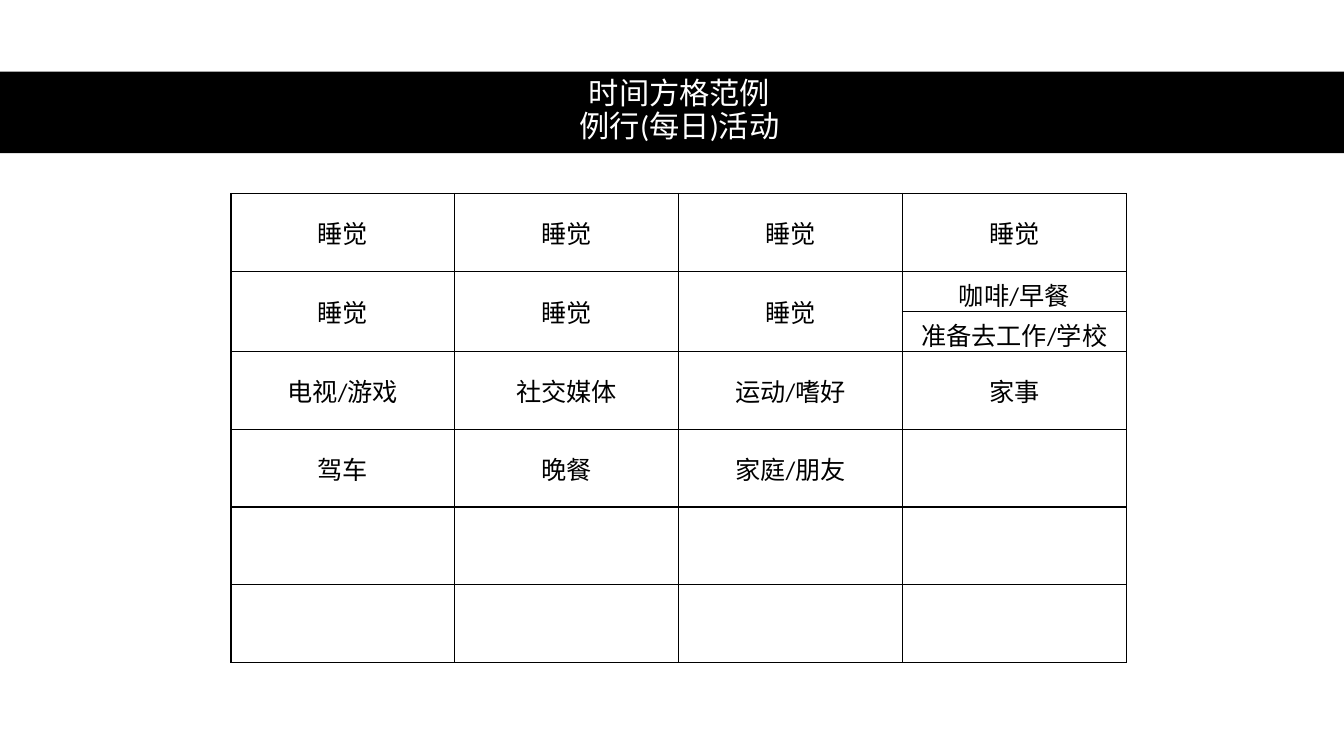
import pptx
import pptx.dml.color
import pptx.enum.shapes
import pptx.enum.text
import pptx.oxml
import pptx.oxml.ns
import pptx.util

SLIDE_WIDTH = pptx.util.Inches(13.33)
SLIDE_HEIGHT = pptx.util.Inches(7.5)
BLACK = "000000"
WHITE = "FFFFFF"
FONT = "Calibri"
HEADING = "时间方格范例\v例行(每日)活动"
COLUMN_WIDTH = pptx.util.Inches(2.22)
ROW_HEIGHT = pptx.util.Inches(0.77)
SPLIT_ROW = 1
SPLIT_COLUMN = 3
ACTIVITIES = [
    ["睡觉", "睡觉", "睡觉", "睡觉"],
    ["睡觉", "睡觉", "睡觉", "咖啡/早餐"],
    ["", "", "", "准备去工作/学校"],
    ["电视/游戏", "社交媒体", "运动/嗜好", "家事"],
    ["驾车", "晚餐", "家庭/朋友", ""],
    ["", "", "", ""],
    ["", "", "", ""],
]


def rgb(hex_colour):
    """Turn a hex string into a colour."""
    return pptx.dml.color.RGBColor.from_string(hex_colour)


def write_centred(frame, text, size, colour):
    """Write one centred paragraph in the slide's font."""
    frame.text = text
    paragraph = frame.paragraphs[0]
    paragraph.alignment = pptx.enum.text.PP_ALIGN.CENTER
    paragraph.font.size = pptx.util.Pt(size)
    for run in paragraph.runs:
        run.font.name = FONT
        run.font.size = pptx.util.Pt(size)
        run.font.color.rgb = rgb(colour)
    return paragraph


def add_band(slide, top, height):
    """Draw the full-width band behind the heading."""
    band = slide.shapes.add_shape(
        pptx.enum.shapes.MSO_SHAPE.RECTANGLE, 0, top, SLIDE_WIDTH, height)
    band.shadow.inherit = False
    band.fill.solid()
    band.fill.fore_color.rgb = rgb(BLACK)
    band.line.fill.background()


def add_heading(slide, left, top, width, height):
    """Place the two-line heading over the band."""
    heading = slide.shapes.add_textbox(left, top, width, height).text_frame
    heading.word_wrap = True
    heading.vertical_anchor = pptx.enum.text.MSO_ANCHOR.MIDDLE
    write_centred(heading, HEADING, 21.6, WHITE).line_spacing = 0.9


def outline_cell(cell):
    """Give a cell no fill and a thin line on each side."""
    cell.fill.background()
    properties = cell._tc.get_or_add_tcPr()
    for position, side in enumerate(("lnL", "lnR", "lnT", "lnB")):
        border = pptx.oxml.parse_xml(
            f'<a:{side} {pptx.oxml.ns.nsdecls("a")} w="{pptx.util.Pt(1)}">'
            f'<a:solidFill><a:srgbClr val="{BLACK}"/></a:solidFill></a:{side}>')
        properties.insert(position, border)


def add_time_grid(slide, left, top):
    """Build the grid of daily activities with one split time slot."""
    row_count, column_count = len(ACTIVITIES), len(ACTIVITIES[0])
    grid = slide.shapes.add_table(
        row_count, column_count, left, top,
        COLUMN_WIDTH * column_count, ROW_HEIGHT * (row_count - 1)).table
    grid.first_row = False
    grid.horz_banding = False
    for column in grid.columns:
        column.width = COLUMN_WIDTH
    for row_index, activities in enumerate(ACTIVITIES):
        is_split = row_index in (SPLIT_ROW, SPLIT_ROW + 1)
        grid.rows[row_index].height = ROW_HEIGHT // 2 if is_split else ROW_HEIGHT
        for column_index, activity in enumerate(activities):
            cell = grid.cell(row_index, column_index)
            cell.vertical_anchor = pptx.enum.text.MSO_ANCHOR.MIDDLE
            write_centred(cell.text_frame, activity, 18, BLACK)
            outline_cell(cell)
    for column_index in range(SPLIT_COLUMN):
        grid.cell(SPLIT_ROW, column_index).merge(
            grid.cell(SPLIT_ROW + 1, column_index))


def main():
    """Build and save the slide."""
    deck = pptx.Presentation()
    deck.slide_width = SLIDE_WIDTH
    deck.slide_height = SLIDE_HEIGHT
    slide = deck.slides.add_slide(deck.slide_layouts[6])
    band_height = pptx.util.Inches(0.81)
    add_band(slide, pptx.util.Inches(0.71), band_height)
    add_heading(slide, pptx.util.Inches(0.61), pptx.util.Inches(0.7),
                pptx.util.Inches(12.26), band_height)
    add_time_grid(slide, pptx.util.Inches(2.29), pptx.util.Inches(1.92))
    deck.save("out.pptx")


if __name__ == "__main__":
    main()
